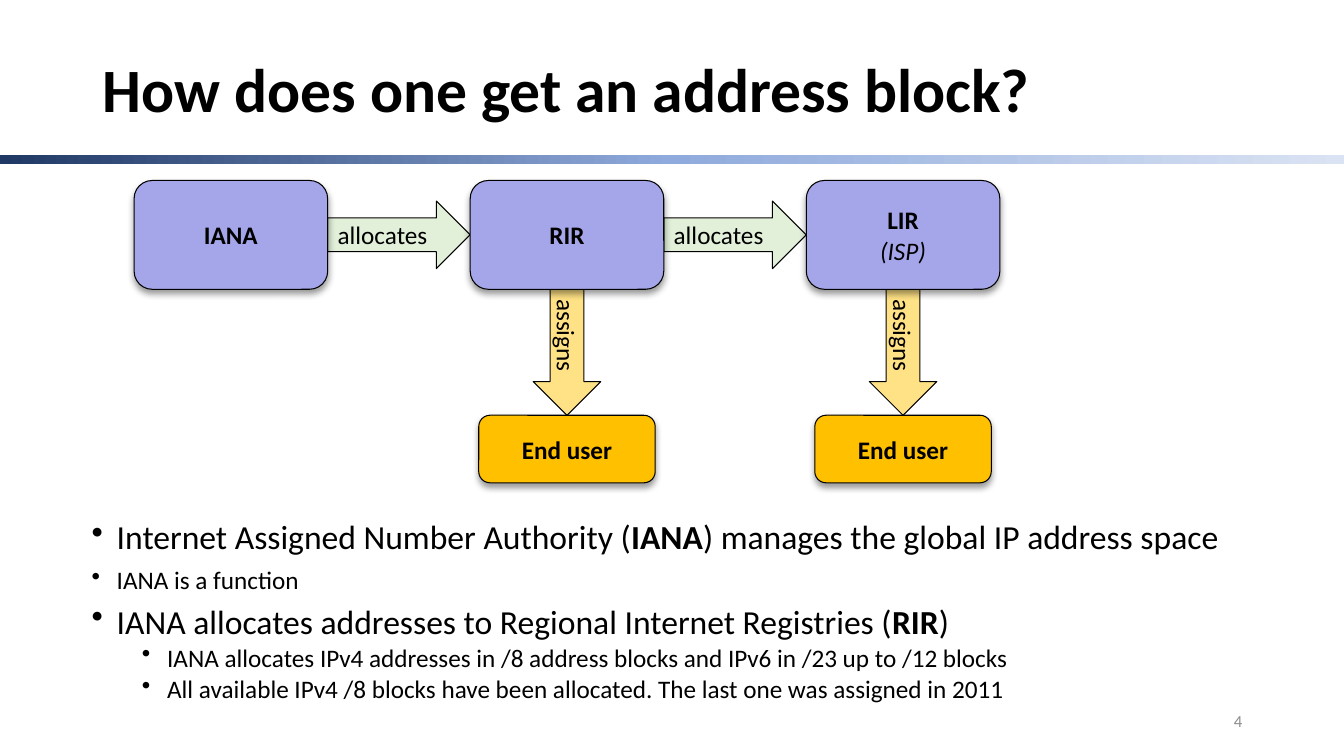
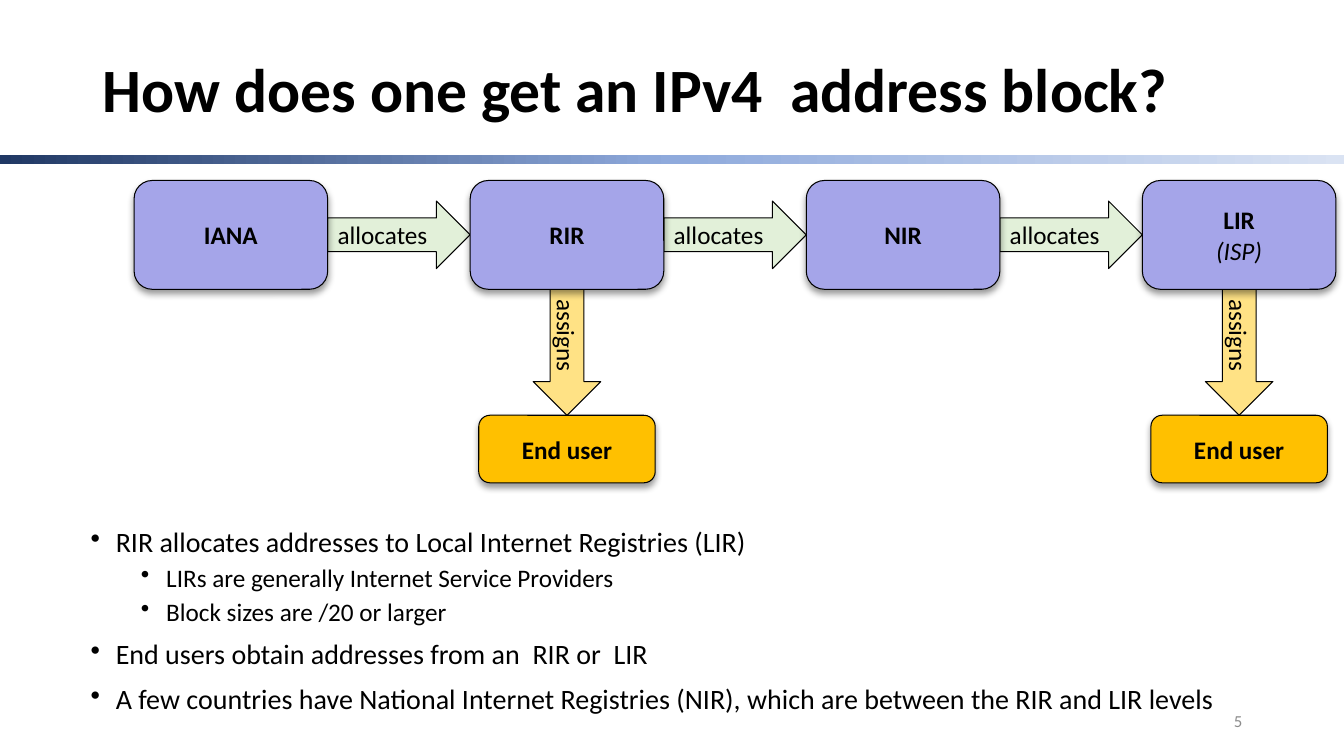
import pptx
import pptx.util
import pptx.dml.color
import pptx.enum.shapes
import pptx.enum.text
import pptx.oxml.ns
import lxml.etree

Inches, Pt = pptx.util.Inches, pptx.util.Pt
Shape = pptx.enum.shapes.MSO_SHAPE
Align = pptx.enum.text.PP_ALIGN
Anchor = pptx.enum.text.MSO_ANCHOR
qn = pptx.oxml.ns.qn

COLORS = {
    "ink": "000000", "grey": "8C8C8C", "node": "A5A5E9", "user": "FFC000",
    "give": "E2F0D9", "assign": "FFE285",
}
BAND = [(0, "203864"), (50, "8FAADC"), (100, "DAE3F3")]
FONT = "Calibri"
WIDE, HIGH = 13.33, 7.5

# Diagram grid: one node per column
LEFT, TOP, PITCH = 1.33, 1.79, 10 / 3
NODE_W, NODE_H = 1.92, 1.08
USER_W, USER_H, USER_Y = 1.75, 0.67, 4.12
ARROW_H = 0.67

LIR = [[("LIR", "b")], [("(ISP)", "i")]]


def rgb(name):
    return pptx.dml.color.RGBColor.from_string(COLORS[name])


def sub(parent, tag, **attrs):
    return lxml.etree.SubElement(parent, qn(tag), attrs)


def write(frame, lines, size=18, color="ink", style="", align=Align.LEFT,
          anchor=Anchor.MIDDLE, space=1.0):
    """Fill a frame; a line is a string or a list of (text, style) runs."""
    frame.word_wrap = True
    frame.vertical_anchor = anchor
    for i, line in enumerate(lines):
        para = frame.paragraphs[0] if i == 0 else frame.add_paragraph()
        para.alignment = align
        para.line_spacing = space
        for text, mark in [(line, style)] if isinstance(line, str) else line:
            run = para.add_run()
            run.text = text
            font = run.font
            font.name, font.size = FONT, Pt(size)
            font.bold, font.italic = "b" in mark, "i" in mark
            font.color.rgb = rgb(color)


def block(slide, kind, box, fill, lines, shadow=False, **fmt):
    """Outlined preset shape with text."""
    shape = slide.shapes.add_shape(kind, *map(Inches, box))
    shape.fill.solid()
    shape.fill.fore_color.rgb = rgb(fill)
    shape.line.color.rgb = rgb("ink")
    shape.line.width = Pt(0.75)
    shape.shadow.inherit = False
    if shadow:
        effects = shape.element.spPr.find(qn("a:effectLst"))
        outer = sub(effects, "a:outerShdw", blurRad=str(Pt(5)), dist=str(Pt(3)),
                    dir="5400000", algn="ctr", rotWithShape="0")
        tint = sub(outer, "a:srgbClr", val=COLORS["ink"])
        sub(tint, "a:alpha", val="40000")
    write(shape.text_frame, lines, **fmt)
    return shape


def card(slide, box, fill, lines):
    block(slide, Shape.ROUNDED_RECTANGLE, box, fill, lines, shadow=True,
          style="b", align=Align.CENTER)


def column(i):
    return LEFT + i * PITCH


def gives(slide, i):
    """Arrow from node i to the next one."""
    box = (column(i) + NODE_W, TOP + (NODE_H - ARROW_H) / 2,
           PITCH - NODE_W, ARROW_H)
    block(slide, Shape.RIGHT_ARROW, box, "give", ["allocates"])


def assigns(slide, i):
    """Arrow down from node i, with the end user below it."""
    mid = column(i) + NODE_W / 2
    base = TOP + NODE_H
    length = USER_Y - base
    box = (mid - length / 2, base + (length - ARROW_H) / 2, length, ARROW_H)
    block(slide, Shape.RIGHT_ARROW, box, "assign", ["assigns"]).rotation = 90
    card(slide, (mid - USER_W / 2, USER_Y, USER_W, USER_H), "user",
         ["End user"])


def chain(slide, names, givers):
    """Row of nodes; givers are the columns that assign to end users."""
    for i in range(len(names) - 1):
        gives(slide, i)
    for i in givers:
        assigns(slide, i)
    for i, lines in enumerate(names):
        card(slide, (column(i), TOP, NODE_W, NODE_H), "node", lines)


def points(slide, box, items, space):
    """Bulleted text; an item is (level, size, line)."""
    frame = slide.shapes.add_textbox(*map(Inches, box)).text_frame
    write(frame, [line for _, _, line in items], anchor=Anchor.TOP, space=space)
    for para, (level, size, _) in zip(frame.paragraphs, items):
        para.level = level
        para.space_before = Pt(5 if level else 10)
        for run in para.runs:
            run.font.size = Pt(size)
        props = para._p.get_or_add_pPr()
        props.set("marL", str(Inches(0.25 + 0.5 * level)))
        props.set("indent", str(Inches(-0.25)))
        sub(props, "a:buChar", char="•")


def band(slide):
    bar = slide.shapes.add_shape(Shape.RECTANGLE, 0, Inches(1.54),
                                 Inches(WIDE), Inches(0.09))
    bar.shadow.inherit = False
    bar.line.fill.background()
    bar.fill.gradient()
    bar.fill.gradient_angle = 0
    stops = bar.element.spPr.find(".//" + qn("a:gsLst"))
    for old in list(stops):
        stops.remove(old)
    for share, color in BAND:
        stop = sub(stops, "a:gs", pos=str(share * 1000))
        sub(stop, "a:srgbClr", val=color)


def number(slide, value):
    box = slide.shapes.add_textbox(*map(Inches, (9.42, 6.95, 3, 0.4)))
    write(box.text_frame, [str(value)], size=12, color="grey",
          align=Align.RIGHT)


def page(deck, title, value):
    """Slide with the shared title, band and number."""
    slide = deck.slides.add_slide(deck.slide_layouts[5])
    head = slide.shapes.title
    head.left, head.top, head.width, head.height = map(
        Inches, (0.92, 0.4, 11.5, 1.04))
    write(head.text_frame, [title], size=44, style="b", space=0.9)
    band(slide)
    number(slide, value)
    return slide


def main():
    deck = pptx.Presentation()
    deck.slide_width, deck.slide_height = Inches(WIDE), Inches(HIGH)

    # IANA, RIR and LIR
    slide = page(deck, "How does one get an address block?", 4)
    points(slide, (0.81, 5.15, 12.27, 2), [
        (0, 24, [("Internet Assigned Number Authority (", ""), ("IANA", "b"),
                 (") manages the global IP address space", "")]),
        (0, 18, "IANA is a function"),
        (0, 24, [("IANA allocates addresses to Regional Internet Registries (",
                  ""), ("RIR", "b"), (")", "")]),
        (1, 18, "IANA allocates IPv4 addresses in /8 address blocks and IPv6 "
                "in /23 up to /12 blocks"),
        (1, 18, "All available IPv4 /8 blocks have been allocated. The last "
                "one was assigned in 2011"),
    ], 0.8)
    chain(slide, [["IANA"], ["RIR"], LIR], [1, 2])

    # National registries in between
    slide = page(deck, "How does one get an IPv4  address block?", 5)
    points(slide, (0.8, 5.19, 11.88, 2), [
        (0, 20, "RIR allocates addresses to Local Internet Registries (LIR)"),
        (1, 18, "LIRs are generally Internet Service Providers"),
        (1, 18, "Block sizes are /20 or larger"),
        (0, 20, "End users obtain addresses from an  RIR or  LIR"),
        (0, 20, "A few countries have National Internet Registries (NIR), "
                "which are between the RIR and LIR levels"),
    ], 0.9)
    chain(slide, [["IANA"], ["RIR"], ["NIR"], LIR], [1, 3])

    deck.save("out.pptx")


if __name__ == "__main__":
    main()
